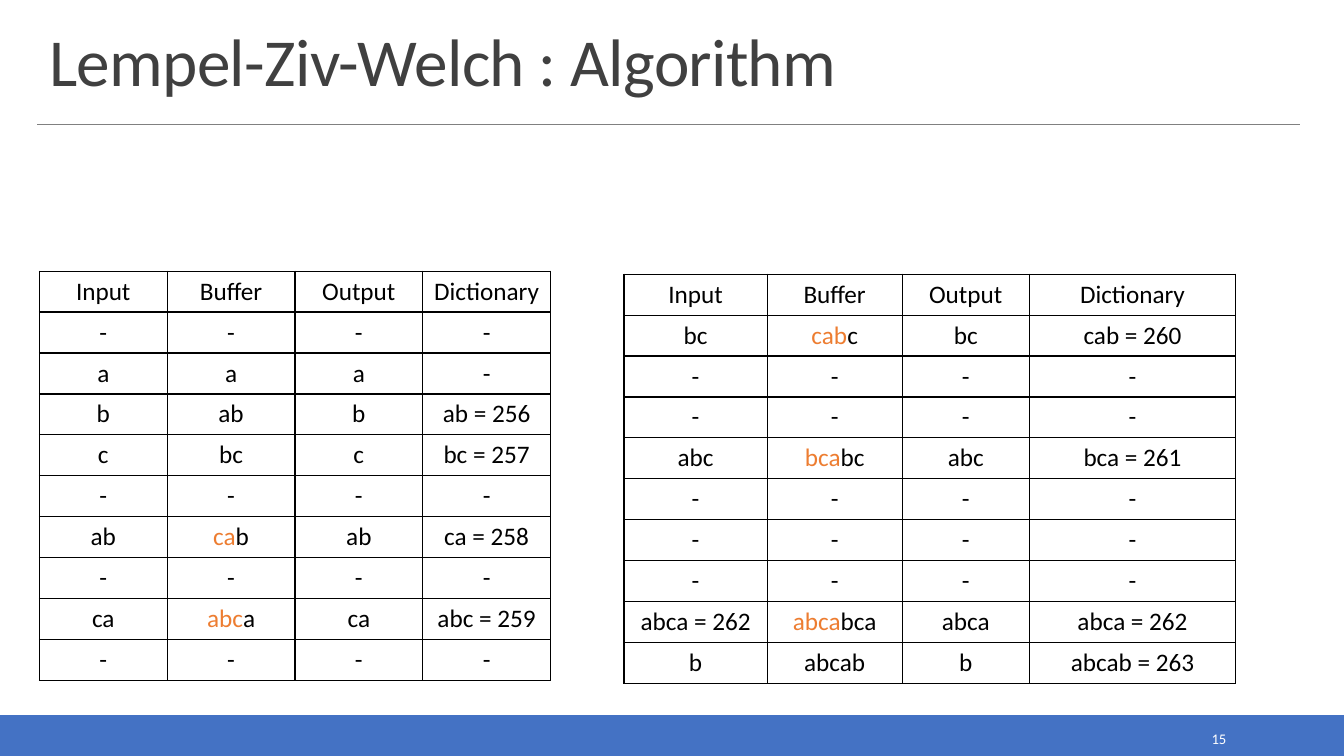
from dataclasses import dataclass

from lxml.etree import SubElement
from pptx import Presentation
from pptx.dml.color import RGBColor
from pptx.enum.shapes import MSO_CONNECTOR, MSO_SHAPE
from pptx.enum.text import MSO_ANCHOR, MSO_AUTO_SIZE, PP_ALIGN
from pptx.oxml.ns import qn
from pptx.util import Inches, Pt


@dataclass(frozen=True)
class Theme:
    font: str = "Calibri"
    ink: str = "000000"
    title: str = "404040"
    accent: str = "ED7D31"
    band: str = "4472C4"
    rule: str = "808080"
    paper: str = "FFFFFF"
    title_size: float = 48
    cell_size: float = 18
    number_size: float = 10.5


@dataclass(frozen=True)
class Frame:
    """A rectangle in percent of the slide's width and height."""
    left: float
    top: float
    width: float
    height: float

    def lengths(self) -> tuple[int, int, int, int]:
        return (across(self.left), down(self.top),
                across(self.width), down(self.height))


@dataclass(frozen=True)
class StepTable:
    """Column weights and steps; text before a bar is the buffer's new entry."""
    frame: Frame
    columns: tuple[float, ...]
    steps: tuple[tuple[str, ...], ...]


THEME = Theme()
SLIDE_WIDTH, SLIDE_HEIGHT = Inches(13.33), Inches(7.5)
HEADER = ("Input", "Buffer", "Output", "Dictionary")
IDLE = ("-",) * len(HEADER)

TABLES = (
    StepTable(Frame(2.93, 35.87, 38.03, 54.13), (1, 1, 1, 1), (
        IDLE,
        ("a", "a", "a", "-"),
        ("b", "ab", "b", "ab = 256"),
        ("c", "bc", "c", "bc = 257"),
        IDLE,
        ("ab", "ca|b", "ab", "ca = 258"),
        IDLE,
        ("ca", "abc|a", "ca", "abc = 259"),
        IDLE,
    )),
    StepTable(Frame(46.43, 36.27, 45.53, 54.13), (1.42, 1.34, 1.26, 2.05), (
        ("bc", "cab|c", "bc", "cab = 260"),
        IDLE,
        IDLE,
        ("abc", "bca|bc", "abc", "bca = 261"),
        IDLE,
        IDLE,
        IDLE,
        ("abca = 262", "abca|bca", "abca", "abca = 262"),
        ("b", "abcab", "b", "abcab = 263"),
    )),
)


def across(percent: float) -> int:
    return round(SLIDE_WIDTH * percent / 100)


def down(percent: float) -> int:
    return round(SLIDE_HEIGHT * percent / 100)


def set_all(target, values: dict) -> None:
    for name, value in values.items():
        setattr(target, name, value)


def add_span(para, text: str, size: float, color: str):
    span = para.add_run()
    span.text = text
    set_all(span.font, {"name": THEME.font, "size": Pt(size)})
    span.font.color.rgb = RGBColor.from_string(color)
    return span


def add_band(page, frame: Frame) -> None:
    band = page.shapes.add_shape(MSO_SHAPE.RECTANGLE, *frame.lengths())
    band.shadow.inherit = False
    band.fill.solid()
    band.fill.fore_color.rgb = RGBColor.from_string(THEME.band)
    band.line.color.rgb = RGBColor.from_string(THEME.band)
    band.line.width = Pt(1.25)


def add_rule(page, left: float, right: float, top: float) -> None:
    rule = page.shapes.add_connector(
        MSO_CONNECTOR.STRAIGHT, across(left), down(top), across(right), down(top))
    rule.line.color.rgb = RGBColor.from_string(THEME.rule)
    rule.line.width = Pt(0.5)
    SubElement(rule.element.spPr, qn("a:effectLst"))


def place_title(page, text: str, frame: Frame) -> None:
    title = page.shapes.title
    set_all(title, dict(zip(("left", "top", "width", "height"), frame.lengths())))
    set_all(title.text_frame, {"vertical_anchor": MSO_ANCHOR.BOTTOM,
                               "auto_size": MSO_AUTO_SIZE.NONE, "word_wrap": True})
    para = title.text_frame.paragraphs[0]
    set_all(para, {"alignment": PP_ALIGN.LEFT, "line_spacing": 0.85})
    span = add_span(para, text, THEME.title_size, THEME.title)
    span.font._element.set("spc", "-50")


def add_page_number(page, text: str, frame: Frame) -> None:
    box = page.shapes.add_textbox(*frame.lengths())
    set_all(box.text_frame, {"vertical_anchor": MSO_ANCHOR.MIDDLE, "word_wrap": True})
    para = box.text_frame.paragraphs[0]
    para.alignment = PP_ALIGN.RIGHT
    add_span(para, text, THEME.number_size, THEME.paper)


def add_borders(cell) -> None:
    properties = cell._tc.get_or_add_tcPr()
    for side in ("lnL", "lnR", "lnT", "lnB"):
        line = SubElement(properties, qn(f"a:{side}"), w=str(Pt(1)))
        fill = SubElement(line, qn("a:solidFill"))
        SubElement(fill, qn("a:srgbClr"), val=THEME.ink)


def fill_cell(cell, text: str) -> None:
    add_borders(cell)
    cell.fill.background()
    para = cell.text_frame.paragraphs[0]
    para.alignment = PP_ALIGN.CENTER
    entry, _, rest = text.rpartition("|")
    if entry:
        add_span(para, entry, THEME.cell_size, THEME.accent)
    add_span(para, rest, THEME.cell_size, THEME.ink)


def add_step_table(page, layout: StepTable) -> None:
    rows = (HEADER, *layout.steps)
    table = page.shapes.add_table(
        len(rows), len(HEADER), *layout.frame.lengths()).table
    set_all(table, {"first_row": False, "horz_banding": False})
    for column, weight in zip(table.columns, layout.columns):
        column.width = across(layout.frame.width * weight / sum(layout.columns))
    for row, texts in zip(table.rows, rows):
        row.height = down(layout.frame.height / len(rows))
        for cell, text in zip(row.cells, texts):
            fill_cell(cell, text)


def main() -> None:
    deck = Presentation()
    set_all(deck, {"slide_width": SLIDE_WIDTH, "slide_height": SLIDE_HEIGHT})
    page = deck.slides.add_slide(deck.slide_layouts.get_by_name("Title Only"))

    # Footer band and header rule
    add_band(page, Frame(0, 94.67, 100, 5.33))
    add_rule(page, 2.78, 96.7, 16.4)

    # Title and page number
    place_title(page, "Lempel-Ziv-Welch : Algorithm", Frame(2.93, 2.67, 93.92, 11.2))
    add_page_number(page, "15", Frame(81.25, 95.87, 10.73, 3.73))

    # Encoding steps, in two halves
    for layout in TABLES:
        add_step_table(page, layout)

    deck.save("out.pptx")


if __name__ == "__main__":
    main()
